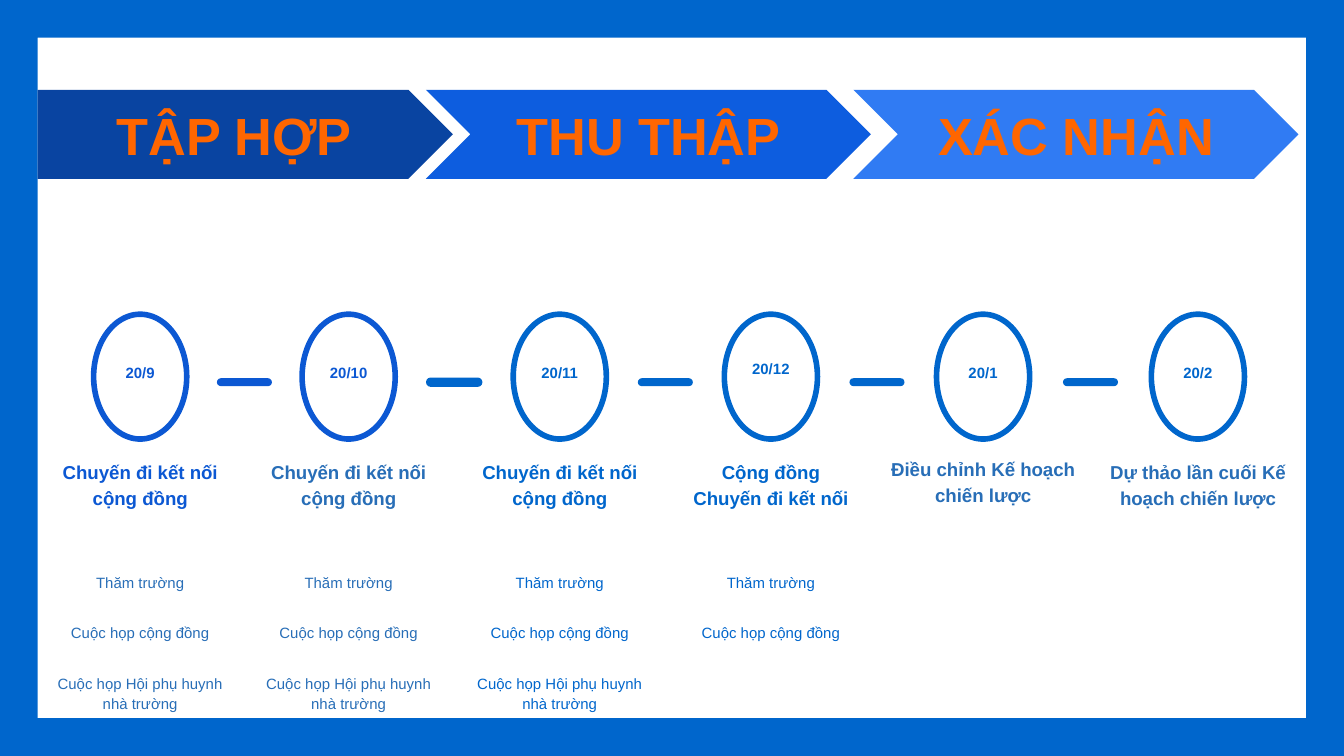
import lxml.etree
import pptx
import pptx.dml.color
import pptx.enum.shapes
import pptx.enum.text
import pptx.oxml.ns
import pptx.util

Cm = pptx.util.Cm
Pt = pptx.util.Pt
RGBColor = pptx.dml.color.RGBColor
SHAPE = pptx.enum.shapes.MSO_SHAPE
ANCHOR = pptx.enum.text.MSO_ANCHOR

FRAME_BLUE = RGBColor(0x00, 0x66, 0xCC)
ROYAL = RGBColor(0x0C, 0x58, 0xD3)
STEEL = RGBColor(0x28, 0x6E, 0xB7)
NAVY = RGBColor(0x09, 0x44, 0xA1)
PHASE_BLUE = RGBColor(0x0D, 0x5D, 0xDF)
SKY = RGBColor(0x30, 0x7B, 0xF3)
ORANGE = RGBColor(0xFF, 0x66, 0x00)

TRIP = ["Chuyến đi kết nối cộng đồng"]
VISITS = ["Thăm trường", "Cuộc họp cộng đồng",
          "Cuộc họp Hội phụ huynh nhà trường"]

# Phase: text, shape, left, width, fill
PHASES = [
    ("TẬP HỢP", SHAPE.PENTAGON, 0.71, 7.85, NAVY),
    ("THU THẬP", SHAPE.CHEVRON, 8.05, 8.41, PHASE_BLUE),
    ("XÁC NHẬN", SHAPE.CHEVRON, 16.13, 8.41, SKY),
]

# Milestone: centre, width, date, date top, ring colour,
# heading, heading bottom, heading colour, activities, activity colour
MILESTONES = [
    (2.65, 3.86, "20/9", 6.58, ROYAL, TRIP, 9.88, ROYAL, VISITS, STEEL),
    (6.59, 3.86, "20/10", 6.58, ROYAL, TRIP, 9.88, STEEL, VISITS, STEEL),
    (10.58, 4.01, "20/11", 6.58, FRAME_BLUE, TRIP, 9.88, FRAME_BLUE,
     VISITS, FRAME_BLUE),
    (14.57, 4.01, "20/12", 6.5, FRAME_BLUE,
     ["Cộng đồng", "Chuyến đi kết nối"], 9.88, FRAME_BLUE,
     VISITS[:2], FRAME_BLUE),
    (18.58, 4.01, "20/1", 6.58, FRAME_BLUE,
     ["Điều chỉnh Kế hoạch chiến lược"], 9.82, STEEL, [], STEEL),
    (22.64, 4.01, "20/2", 6.58, FRAME_BLUE,
     ["Dự thảo lần cuối Kế hoạch chiến lược"], 9.88, STEEL, [], STEEL),
]


def write(sp, lines, size, color, bold=True, anchor=ANCHOR.TOP,
          spacing=1.15, gap=0):
    """Fill a shape with centred paragraphs, gap points apart."""
    tf = sp.text_frame
    tf.word_wrap = True
    tf.auto_size = pptx.enum.text.MSO_AUTO_SIZE.NONE
    tf.vertical_anchor = anchor
    tf.margin_left = tf.margin_right = Cm(0.25)
    tf.margin_top = tf.margin_bottom = Cm(0.25)
    for i, line in enumerate(lines):
        p = tf.add_paragraph() if i else tf.paragraphs[0]
        p.alignment = pptx.enum.text.PP_ALIGN.CENTER
        p.line_spacing = spacing
        p.space_before = Pt(gap if i else 0)
        r = p.add_run()
        r.text = line
        r.font.name = "Arial"
        r.font.size = Pt(size)
        r.font.bold = bold
        r.font.color.rgb = color


def add_shape(s, kind, left, top, width, height, fill=None, line=None):
    sp = s.shapes.add_shape(kind, Cm(left), Cm(top), Cm(width), Cm(height))
    sp.shadow.inherit = False
    if fill is None:
        sp.fill.background()
    else:
        sp.fill.solid()
        sp.fill.fore_color.rgb = fill
    if line is None:
        sp.line.fill.background()
    else:
        sp.line.color.rgb = line
    return sp


def add_text(s, left, top, width, height, lines, size, color, **style):
    sp = s.shapes.add_textbox(Cm(left), Cm(top), Cm(width), Cm(height))
    write(sp, lines, size, color, **style)


def add_phase(s, text, kind, left, width, fill):
    sp = add_shape(s, kind, left, 1.7, width, 1.68, fill)
    write(sp, [text], 28, ORANGE, anchor=ANCHOR.MIDDLE, spacing=1.0)


def add_dash(s, center, color, line=None):
    sp = add_shape(s, SHAPE.ROUNDED_RECTANGLE, center - 0.52, 7.15,
                   1.04, 0.15, color, line)
    sp.adjustments[0] = 0.5
    if line is not None:
        sp.line.width = Pt(0.75)


def fill_list(sp, center, width, lines, color):
    """Place a body placeholder and fill it as a list without bullets."""
    sp.left, sp.top = Cm(center - width / 2), Cm(10.54)
    sp.width, sp.height = Cm(width), Cm(2.92)
    write(sp, lines, 8, color, bold=False, gap=16)
    for p in sp.text_frame.paragraphs:
        pPr = p._p.get_or_add_pPr()
        pPr.set("marL", "0")
        pPr.set("indent", "0")
        lxml.etree.SubElement(pPr, pptx.oxml.ns.qn("a:buNone"))


def add_milestone(s, bodies, center, width, date, date_top, ring, heading,
                  bottom, heading_color, activities, activity_color):
    sp = add_shape(s, SHAPE.OVAL, center - 0.88, 5.94, 1.76, 2.36, line=ring)
    sp.line.width = Pt(3)
    add_text(s, center - 0.65, date_top, 1.3, 1.27, [date], 8, ring)
    add_text(s, center - width / 2, bottom - 1.78, width, 1.78, heading,
             10, heading_color, anchor=ANCHOR.BOTTOM)
    if activities:
        fill_list(next(bodies), center, width, activities, activity_color)


def main():
    prs = pptx.Presentation()
    prs.slide_width, prs.slide_height = Cm(25.4), Cm(14.29)

    # The comparison layout has four body placeholders for the four lists
    s = prs.slides.add_slide(prs.slide_layouts[4])
    title = s.shapes.title
    title.element.getparent().remove(title.element)
    bodies = iter(list(s.placeholders))

    # Border
    sp = add_shape(s, SHAPE.FRAME, 0, 0, 25.4, 14.29, FRAME_BLUE)
    sp.adjustments[0] = 0.05

    # Phase arrows
    for phase in PHASES:
        add_phase(s, *phase)

    # Timeline
    for milestone in MILESTONES:
        add_milestone(s, bodies, *milestone)

    # Dashes midway between neighbouring milestones
    centers = [milestone[0] for milestone in MILESTONES]
    for i, (a, b) in enumerate(zip(centers, centers[1:])):
        add_dash(s, (a + b) / 2, FRAME_BLUE if i else ROYAL,
                 FRAME_BLUE if i == 1 else None)

    prs.save("out.pptx")


if __name__ == "__main__":
    main()
